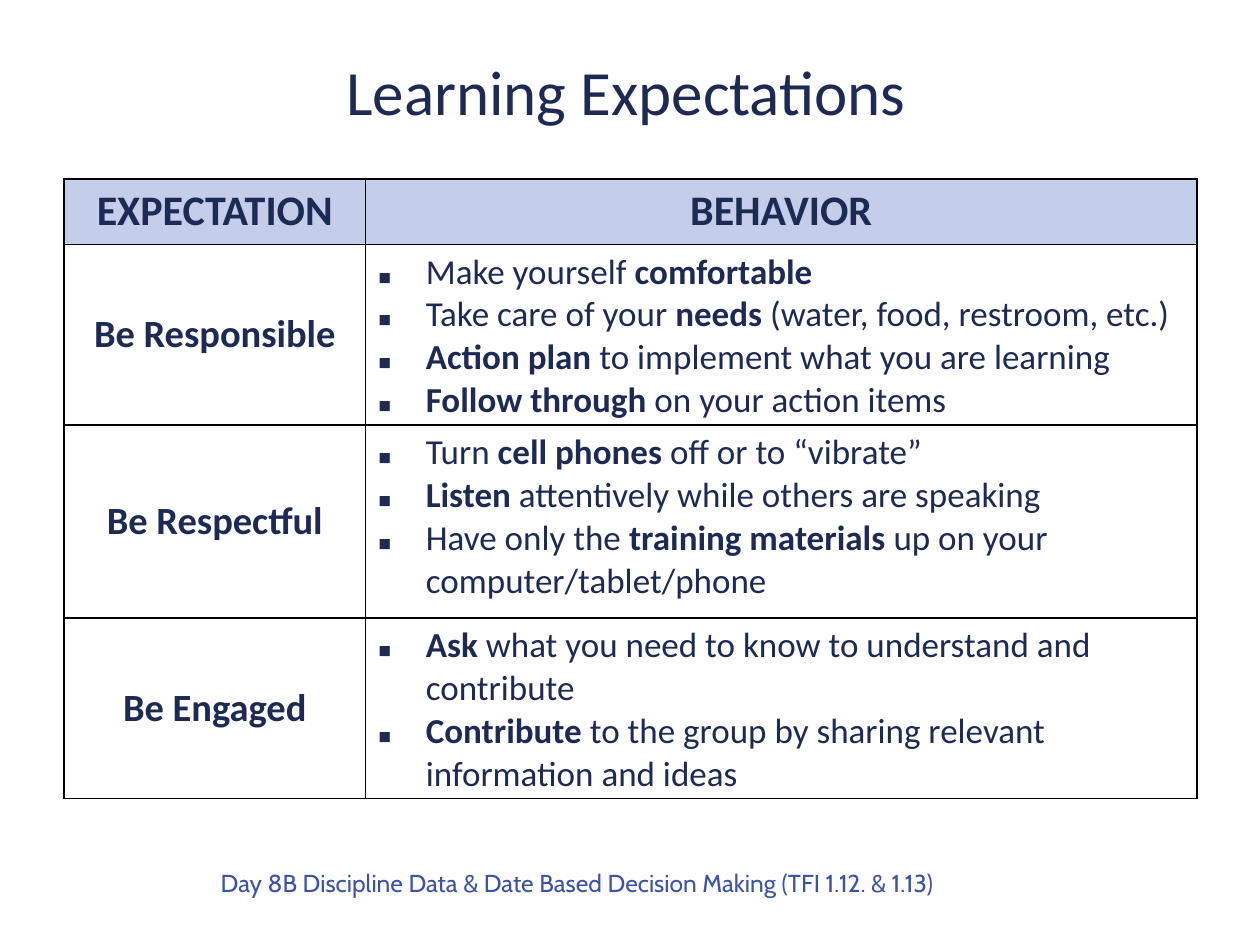
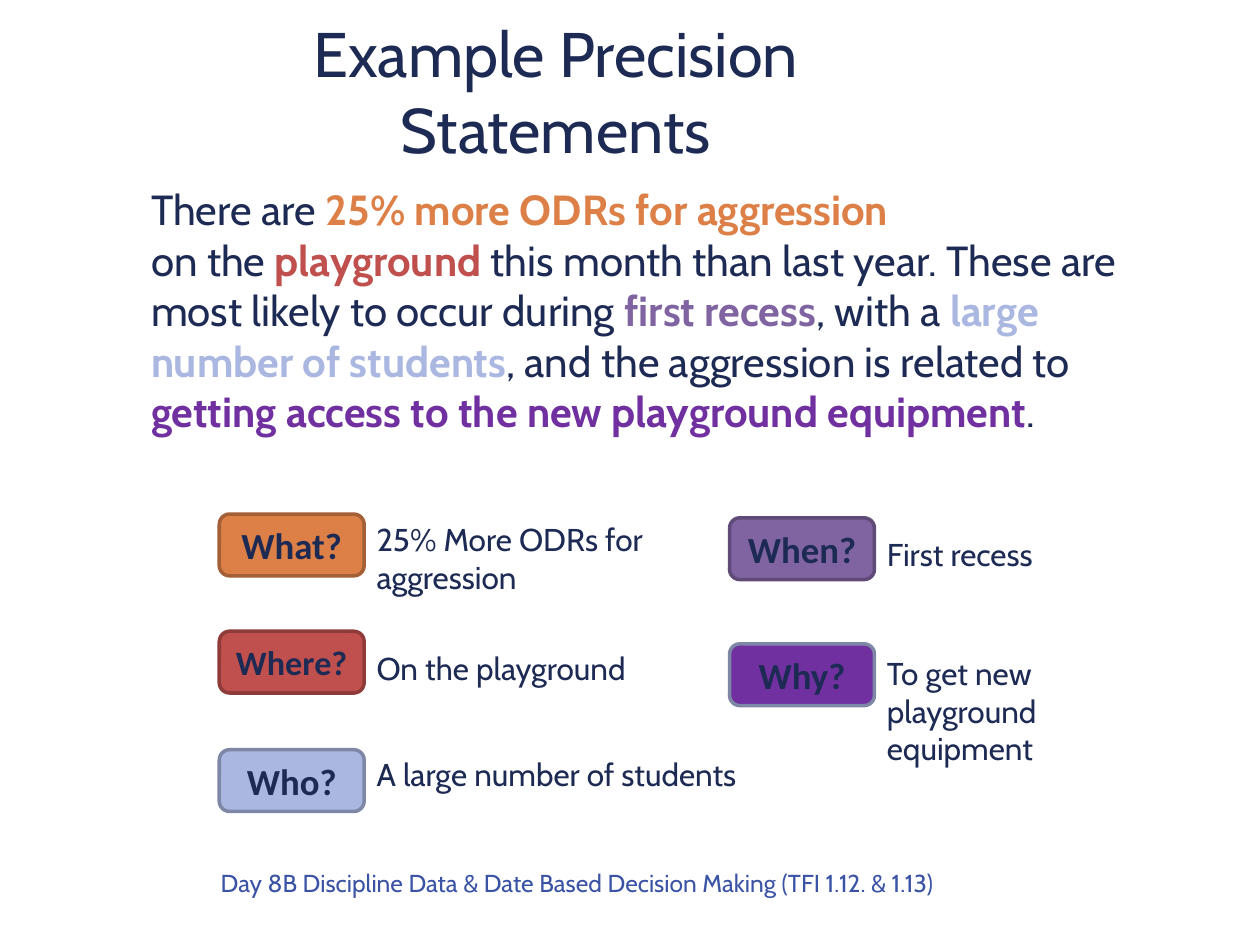
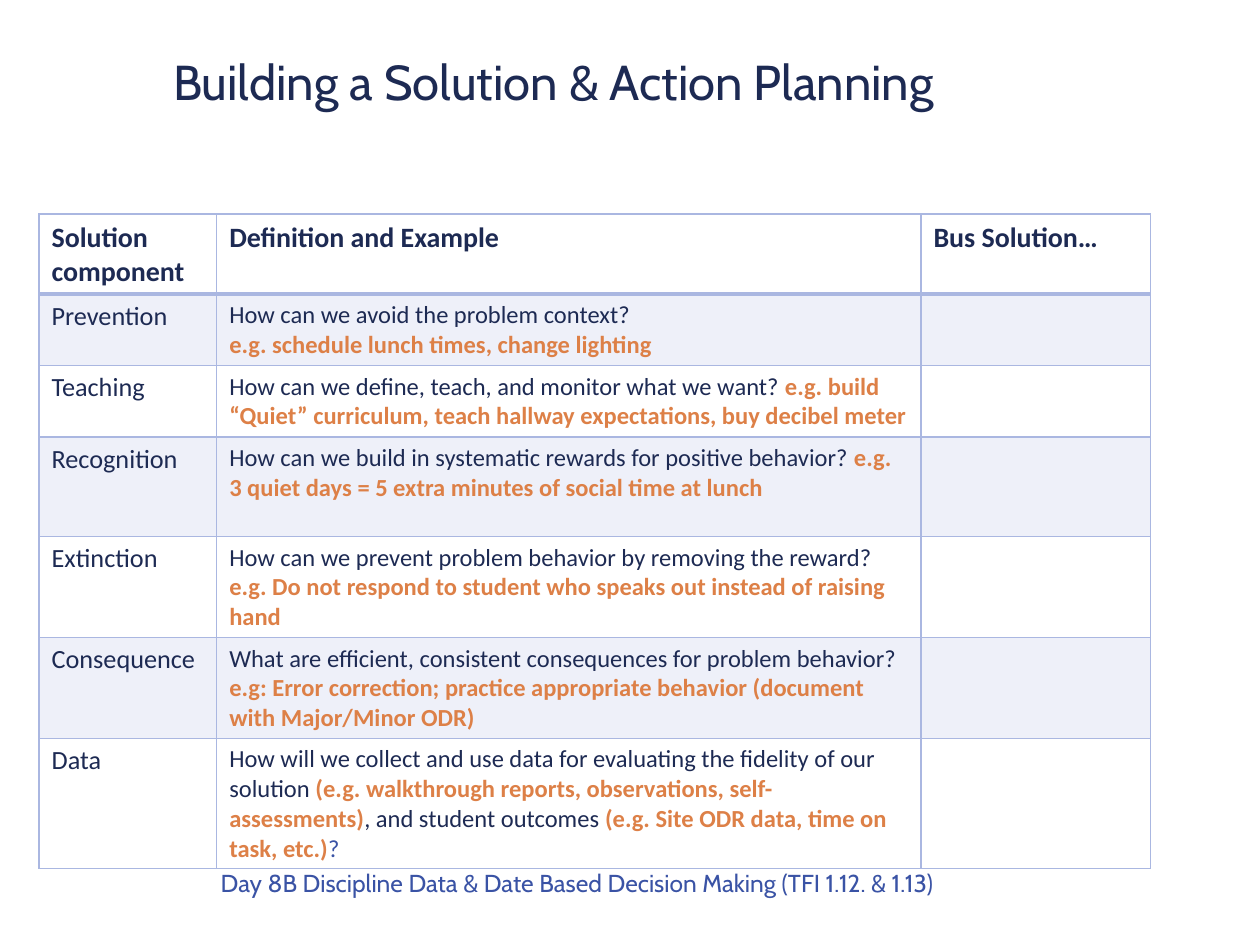
from dataclasses import dataclass

from lxml.etree import SubElement
from pptx import Presentation
from pptx.dml.color import RGBColor
from pptx.enum.shapes import MSO_SHAPE
from pptx.enum.text import MSO_ANCHOR, MSO_AUTO_SIZE, PP_ALIGN
from pptx.oxml.ns import qn
from pptx.util import Inches, Pt


@dataclass(frozen=True)
class Theme:
    """Colours, fonts and type sizes shared by the slides."""

    ink: str = "1D2A53"
    footer: str = "3A53A5"
    header: str = "C4CDEA"
    black: str = "000000"
    periwinkle: str = "AAB7E1"
    orange: str = "DD8047"
    red: str = "C0504D"
    mauve: str = "8064A2"
    purple: str = "7030A0"
    periwinkle_edge: str = "7E87A6"
    orange_edge: str = "A35F35"
    red_edge: str = "8E3B39"
    mauve_edge: str = "5F4A78"
    display: str = "Cabin"
    body: str = "Calibri"
    title_size: float = 36
    small_title_size: float = 28
    statement_size: float = 24
    chip_size: float = 21
    answer_size: float = 18
    footer_size: float = 14


T = Theme()
FOOTER = "Day 8B Discipline Data & Date Based Decision Making (TFI 1.12. & 1.13)"
BREAK = "\n"


def strong(text, color=T.ink):
    """Return a bold segment in the given colour."""
    return text, {"color": color, "bold": True}


def example(text):
    """Return a bold orange segment."""
    return strong(text, T.orange)


EXPECTATIONS = [
    ("Be Responsible", [
        ["Make yourself ", strong("comfortable")],
        ["Take care of your ", strong("needs"), " (water, food, restroom, etc.)"],
        [strong("Action plan "), "to implement what you are learning"],
        [strong("Follow through "), "on your action items"],
    ]),
    ("Be Respectful", [
        ["Turn ", strong("cell phones"), " off or to “vibrate”"],
        [strong("Listen "), "attentively while others are speaking"],
        ["Have only the ", strong("training materials "),
         "up on your computer/tablet/phone"],
    ]),
    ("Be Engaged", [
        [strong("Ask"), " what you need to know to understand and contribute"],
        [strong("Contribute "),
         "to the group by sharing relevant information and ideas"],
    ]),
]

STATEMENT = [
    "There are ", strong("25% more ODRs for aggression", T.orange), BREAK,
    "on the ", strong("playground", T.red),
    " this month than last year. These are most likely to occur during ",
    strong("first recess", T.mauve), ", with a ",
    strong("large number of students", T.periwinkle),
    ", and the aggression is related to ",
    strong("getting access to the new playground equipment", T.purple), ".",
]

SOLUTIONS = [
    ("Prevention", [
        ["How can we avoid the problem context?"],
        [example("e.g. schedule lunch times, change lighting")],
    ]),
    ("Teaching", [[
        "How can we define, teach, and monitor what we want? ",
        example("e.g. build “Quiet” curriculum, teach hallway expectations, "
                "buy decibel meter"),
    ]]),
    ("Recognition", [[
        "How can we build in systematic rewards for positive behavior? ",
        example("e.g. 3 quiet days = 5 extra minutes of social time at lunch"),
    ]]),
    ("Extinction", [[
        "How can we prevent problem behavior by removing the reward? ",
        example("e.g. Do not respond to student who speaks out instead of "
                "raising hand"),
    ]]),
    ("Consequence", [[
        "What are efficient, consistent consequences for problem behavior? ",
        example("e.g: Error correction; practice appropriate behavior "
                "(document with Major/Minor ODR)"),
    ]]),
    ("Data", [[
        "How will we collect and use data for evaluating the fidelity of our "
        "solution ",
        example("(e.g. walkthrough reports, observations, self-assessments)"),
        ", and student outcomes ",
        example("(e.g. Site ODR data, time on task, etc.)"),
        ("?", {"color": T.footer}),
    ]]),
]


def add_run(p, text, size=18, font=T.body, color=T.ink, bold=False):
    """Add one formatted run to a paragraph."""
    r = p.add_run()
    r.text = text
    r.font.size = Pt(size)
    r.font.name = font
    r.font.bold = bold
    r.font.color.rgb = RGBColor.from_string(color)


def add_bullet(p):
    """Give a paragraph a square bullet and a hanging indent."""
    pPr = p._p.get_or_add_pPr()
    pPr.set("marL", str(Inches(0.38)))
    pPr.set("indent", str(-Inches(0.38)))
    SubElement(SubElement(pPr, qn("a:buClr")), qn("a:srgbClr"), val=T.ink)
    SubElement(pPr, qn("a:buFont"), typeface="Noto Sans Symbols")
    SubElement(pPr, qn("a:buChar"), char="▪")


def write(tf, content, align=PP_ALIGN.LEFT, bullets=False, **fmt):
    """Write a string, or a list of paragraphs made of segments."""
    paragraphs = [[content]] if isinstance(content, str) else content
    for i, segments in enumerate(paragraphs):
        p = tf.add_paragraph() if i else tf.paragraphs[0]
        p.alignment = align
        if bullets:
            add_bullet(p)
        for segment in segments:
            if segment == BREAK:
                p.add_line_break()
            elif isinstance(segment, str):
                add_run(p, segment, **fmt)
            else:
                text, extra = segment
                add_run(p, text, **{**fmt, **extra})


def add_text(s, box, content, **fmt):
    """Add a wrapping text box."""
    tf = s.shapes.add_textbox(*map(Inches, box)).text_frame
    tf.word_wrap = True
    write(tf, content, **fmt)


def add_slide(prs, title, box, **fmt):
    """Add a title-only slide with its title and the shared footer."""
    s = prs.slides.add_slide(prs.slide_layouts[5])
    sp = s.shapes.title
    sp.left, sp.top, sp.width, sp.height = map(Inches, box)
    tf = sp.text_frame
    tf.auto_size = MSO_AUTO_SIZE.NONE
    tf.vertical_anchor = MSO_ANCHOR.MIDDLE
    write(tf, title, align=PP_ALIGN.CENTER, **fmt)
    add_text(s, (1.37, 6.84, 6.14, 0.33), FOOTER, align=PP_ALIGN.RIGHT,
             size=T.footer_size, font=T.display, color=T.footer)
    return s


def add_grid(s, left, top, cols, rows):
    """Add an unstyled table with the given column widths and row heights."""
    frame = s.shapes.add_table(len(rows), len(cols), Inches(left), Inches(top),
                               Inches(sum(cols)), Inches(sum(rows)))
    table = frame.table
    table.first_row = table.horz_banding = False
    for column, width in zip(table.columns, cols):
        column.width = Inches(width)
    for row, height in zip(table.rows, rows):
        row.height = Inches(height)
    return table


def style_cell(cell, border, fill=None, alpha=100, top=1, bottom=1):
    """Set the borders and the fill of a cell."""
    tcPr = cell._tc.get_or_add_tcPr()
    for side, width in zip("LRTB", (1, 1, top, bottom)):
        ln = SubElement(tcPr, qn(f"a:ln{side}"), w=str(Pt(width)))
        SubElement(SubElement(ln, qn("a:solidFill")), qn("a:srgbClr"), val=border)
    if fill is None:
        cell.fill.background()
        return
    cell.fill.solid()
    cell.fill.fore_color.rgb = RGBColor.from_string(fill)
    if alpha < 100:
        color = tcPr.find(qn("a:solidFill"))[0]
        SubElement(color, qn("a:alpha"), val=str(alpha * 1000))


def add_chip(s, left, top, label, fill, edge, size=T.chip_size):
    """Add a rounded question label."""
    sp = s.shapes.add_shape(MSO_SHAPE.ROUNDED_RECTANGLE, Inches(left), Inches(top),
                            Inches(1.15), Inches(0.49))
    sp.shadow.inherit = False
    sp.fill.solid()
    sp.fill.fore_color.rgb = RGBColor.from_string(fill)
    sp.line.color.rgb = RGBColor.from_string(edge)
    sp.line.width = Pt(2)
    tf = sp.text_frame
    tf.vertical_anchor = MSO_ANCHOR.MIDDLE
    write(tf, label, align=PP_ALIGN.CENTER, size=size, bold=True)


def expectations_slide(prs):
    """Build the table of expectations and behaviors."""
    s = add_slide(prs, "Learning Expectations", (0.51, 0.38, 8.92, 0.68),
                  size=T.title_size)
    table = add_grid(s, 0.51, 1.42, (2.39, 6.6), (0.52, 1.37, 1.53, 1.37))
    for cell, text in zip(table.rows[0].cells, ("EXPECTATION", "BEHAVIOR")):
        style_cell(cell, T.black, T.header)
        write(cell.text_frame, text, align=PP_ALIGN.CENTER, size=24, bold=True)
    for i, (name, behaviors) in enumerate(EXPECTATIONS, 1):
        label, detail = table.rows[i].cells
        style_cell(label, T.black)
        style_cell(detail, T.black)
        label.vertical_anchor = MSO_ANCHOR.MIDDLE
        write(label.text_frame, name, align=PP_ALIGN.CENTER, size=22, bold=True)
        write(detail.text_frame, behaviors, bullets=True, size=20)


def precision_slide(prs):
    """Build the precision statement and its five questions."""
    s = add_slide(prs, "Example Precision Statements", (1.19, 0.32, 6.44, 0.79),
                  size=T.title_size, font=T.display)
    add_text(s, (1.1, 1.41, 7.91, 4.48), [STATEMENT],
             size=T.statement_size, font=T.display)
    left, right = 1.74, 5.79
    questions = [
        (left, 4.08, "What?", T.orange, T.orange_edge, T.chip_size,
         "25% More ODRs for aggression", 4.08, 2.76, 0.71),
        (left, 5.01, "Where?", T.red, T.red_edge, 19.5,
         "On the playground", 5.1, 2.76, 0.4),
        (left, 5.95, "Who?", T.periwinkle, T.periwinkle_edge, T.chip_size,
         "A large number of students", 5.94, 5.16, 0.4),
        (right, 4.11, "When?", T.mauve, T.mauve_edge, T.chip_size,
         "First recess", 4.2, 2.76, 0.4),
        (right, 5.11, "Why?", T.purple, T.periwinkle_edge, T.chip_size,
         "To get new playground equipment", 5.14, 2.32, 1.01),
    ]
    for x, y, label, fill, edge, size, answer, answer_y, width, height in questions:
        add_chip(s, x, y, label, fill, edge, size)
        add_text(s, (x + 1.15, answer_y, width, height), answer,
                 size=T.answer_size, font=T.display)


def solution_slide(prs):
    """Build the table of solution components."""
    s = add_slide(prs, "Building a Solution & Action Planning",
                  (1.19, 0.23, 6.4, 0.83), size=T.small_title_size, font=T.display)
    table = add_grid(s, 0.31, 1.7, (1.41, 5.59, 1.82),
                     (0.62, 0.56, 0.42, 0.79, 0.79, 0.79, 1.02))
    headings = ("Solution component", "Definition and Example", "Bus Solution…")
    for cell, text in zip(table.rows[0].cells, headings):
        style_cell(cell, T.periwinkle, bottom=2)
        write(cell.text_frame, text, size=16, bold=True)
    for i, (name, definition) in enumerate(SOLUTIONS, 1):
        cells = table.rows[i].cells
        for cell in cells:
            style_cell(cell, T.periwinkle, T.periwinkle if i % 2 else None,
                       alpha=20, top=2 if i == 1 else 1)
        write(cells[0].text_frame, name, size=15)
        write(cells[1].text_frame, definition, size=14)


def main():
    """Build and save the presentation."""
    prs = Presentation()
    prs.slide_width, prs.slide_height = Inches(10), Inches(7.5)
    expectations_slide(prs)
    precision_slide(prs)
    solution_slide(prs)
    prs.save("out.pptx")


if __name__ == "__main__":
    main()
